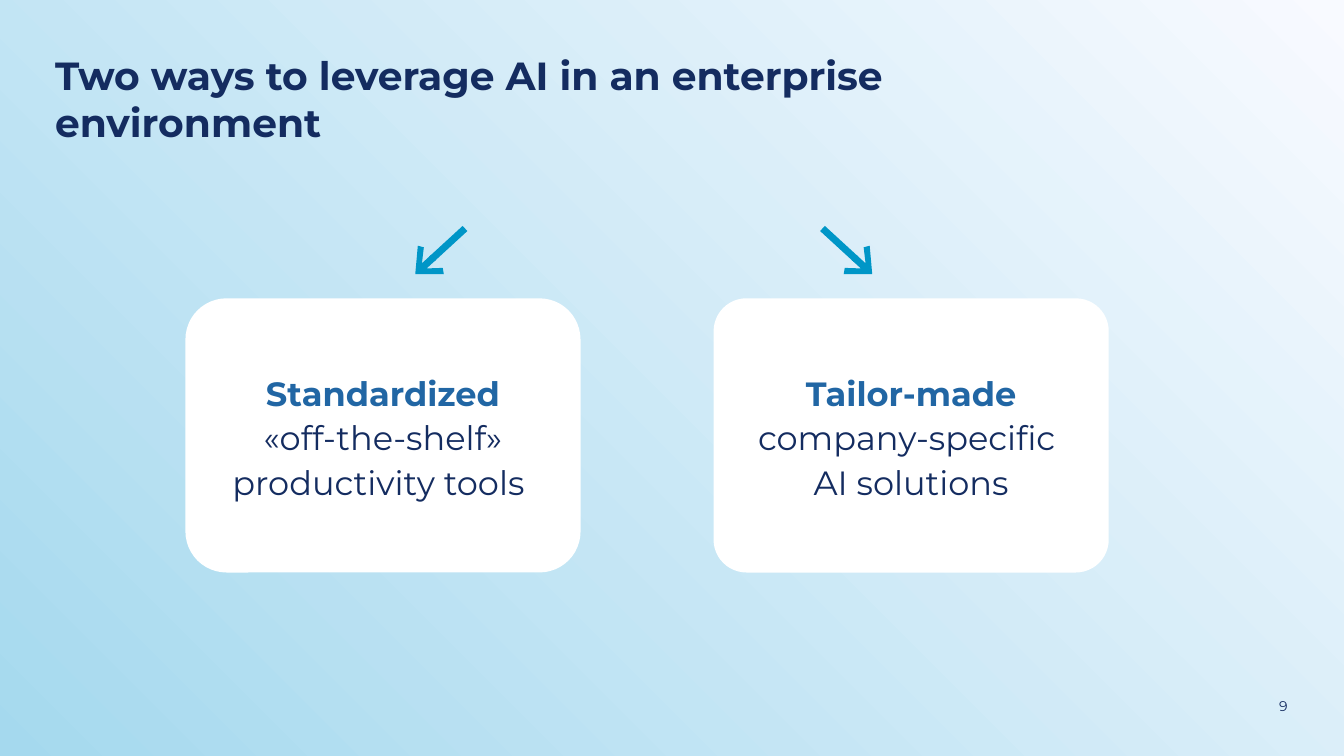
"""Build the slide on two ways to leverage AI in an enterprise."""
from dataclasses import dataclass

from lxml import etree
from pptx import Presentation
from pptx.dml.color import RGBColor
from pptx.enum.shapes import MSO_CONNECTOR, MSO_SHAPE
from pptx.enum.text import MSO_ANCHOR, MSO_AUTO_SIZE, PP_ALIGN
from pptx.oxml.ns import qn
from pptx.slide import Slide
from pptx.text.text import TextFrame, _Paragraph
from pptx.util import Inches, Pt

STRAIGHT = MSO_CONNECTOR.STRAIGHT
ROUNDED = MSO_SHAPE.ROUNDED_RECTANGLE
TOP, MIDDLE = MSO_ANCHOR.TOP, MSO_ANCHOR.MIDDLE
LEFT, CENTER, RIGHT = PP_ALIGN.LEFT, PP_ALIGN.CENTER, PP_ALIGN.RIGHT
FIT_SHAPE = MSO_AUTO_SIZE.SHAPE_TO_FIT_TEXT

NAVY = RGBColor(0x14, 0x2C, 0x60)
BLUE = RGBColor(0x21, 0x66, 0xA4)
CYAN = RGBColor(0x00, 0x96, 0xC7)
WHITE = RGBColor(0xFF, 0xFF, 0xFF)
SKY = RGBColor(0xA5, 0xD9, 0xEE)
MIST = RGBColor(0xF8, 0xFA, 0xFF)

FONT = "Montserrat"
SLIDE_WIDTH = 10
SLIDE_HEIGHT = SLIDE_WIDTH * 9 / 16
CARD_TOP, CARD_WIDTH, CARD_HEIGHT = 2.22, 2.94, 2.04
ARROW_TOP, ARROW_BOTTOM = 1.7, 2.04


@dataclass(frozen=True)
class Option:
    """One way of using AI, with its card and the arrow leading to it."""

    left: float
    rounding: float
    arrow_start: float
    arrow_end: float
    heading: str
    lines: tuple[str, ...]
    new_paragraph: bool


OPTIONS = (
    Option(1.38, 0.15, 3.46, 3.09, "Standardized",
           ("«off-the-shelf» productivity tools ",), True),
    Option(5.31, 0.12, 6.12, 6.49, "Tailor-made",
           (" company-specific ", "AI solutions"), False),
)


def add_run(paragraph: _Paragraph, text: str, size: float,
            color: RGBColor, bold: bool = False) -> None:
    """Append one formatted run."""
    run = paragraph.add_run()
    run.text = text
    run.font.name = FONT
    run.font.size = Pt(size)
    run.font.bold = bold
    run.font.color.rgb = color


def set_frame(frame: TextFrame, anchor: MSO_ANCHOR, vertical: float = 0) -> None:
    """Set wrapping, anchor and margins of a text frame."""
    frame.word_wrap = True
    frame.vertical_anchor = anchor
    frame.margin_left = frame.margin_right = 0
    frame.margin_top = frame.margin_bottom = Inches(vertical)


def paint_background(slide: Slide) -> None:
    """Fill the background with a diagonal gradient."""
    fill = slide.background.fill
    fill.gradient()
    fill.gradient_angle = 45
    for stop, color in zip(fill.gradient_stops, (SKY, MIST)):
        stop.color.rgb = color


def add_title(slide: Slide, text: str) -> None:
    """Place and fill the title placeholder."""
    title = slide.shapes.title
    title.left, title.top = Inches(0.41), Inches(0.38)
    title.width, title.height = Inches(7.83), Inches(0.71)
    frame = title.text_frame
    set_frame(frame, TOP)
    frame.auto_size = FIT_SHAPE
    frame.paragraphs[0].alignment = LEFT
    add_run(frame.paragraphs[0], text, 21, NAVY, bold=True)


def add_page_number(slide: Slide, number: str) -> None:
    """Add the page number at the lower right."""
    box = slide.shapes.add_textbox(
        Inches(8.93), Inches(5.19), Inches(0.65), Inches(0.13))
    set_frame(box.text_frame, MIDDLE)
    box.text_frame.auto_size = FIT_SHAPE
    paragraph = box.text_frame.paragraphs[0]
    paragraph.alignment = RIGHT
    add_run(paragraph, number, 7.5, NAVY)


def add_card(slide: Slide, option: Option) -> None:
    """Draw the rounded card of an option."""
    card = slide.shapes.add_shape(
        ROUNDED, Inches(option.left), Inches(CARD_TOP),
        Inches(CARD_WIDTH), Inches(CARD_HEIGHT))
    card.adjustments[0] = option.rounding
    card.shadow.inherit = False
    card.fill.solid()
    card.fill.fore_color.rgb = WHITE
    card.line.fill.background()
    frame = card.text_frame
    set_frame(frame, MIDDLE, 0.06)
    paragraph = frame.paragraphs[0]
    add_run(paragraph, option.heading, 18, BLUE, bold=True)
    if option.new_paragraph:
        paragraph = frame.add_paragraph()
    for index, line in enumerate(option.lines):
        if index:
            paragraph.add_line_break()
        add_run(paragraph, line, 18, NAVY)
    for paragraph in frame.paragraphs:
        paragraph.alignment = CENTER
        paragraph.line_spacing = 1.1


def add_arrow(slide: Slide, option: Option) -> None:
    """Draw the arrow pointing towards an option's card."""
    arrow = slide.shapes.add_connector(
        STRAIGHT, Inches(option.arrow_start), Inches(ARROW_TOP),
        Inches(option.arrow_end), Inches(ARROW_BOTTOM))
    arrow.line.color.rgb = CYAN
    arrow.line.width = Pt(3.75)
    outline = arrow._element.spPr.find(qn("a:ln"))
    etree.SubElement(outline, qn("a:tailEnd"), type="arrow", w="lg", len="med")
    etree.SubElement(arrow._element.spPr, qn("a:effectLst"))


def main() -> None:
    """Build and save the presentation."""
    presentation = Presentation()
    presentation.slide_width = Inches(SLIDE_WIDTH)
    presentation.slide_height = Inches(SLIDE_HEIGHT)
    slide = presentation.slides.add_slide(presentation.slide_layouts[5])
    paint_background(slide)
    add_page_number(slide, "9")
    add_title(slide, "Two ways to leverage AI in an enterprise environment")
    for option in OPTIONS:
        add_card(slide, option)
    for option in OPTIONS:
        add_arrow(slide, option)
    presentation.save("out.pptx")


if __name__ == "__main__":
    main()
